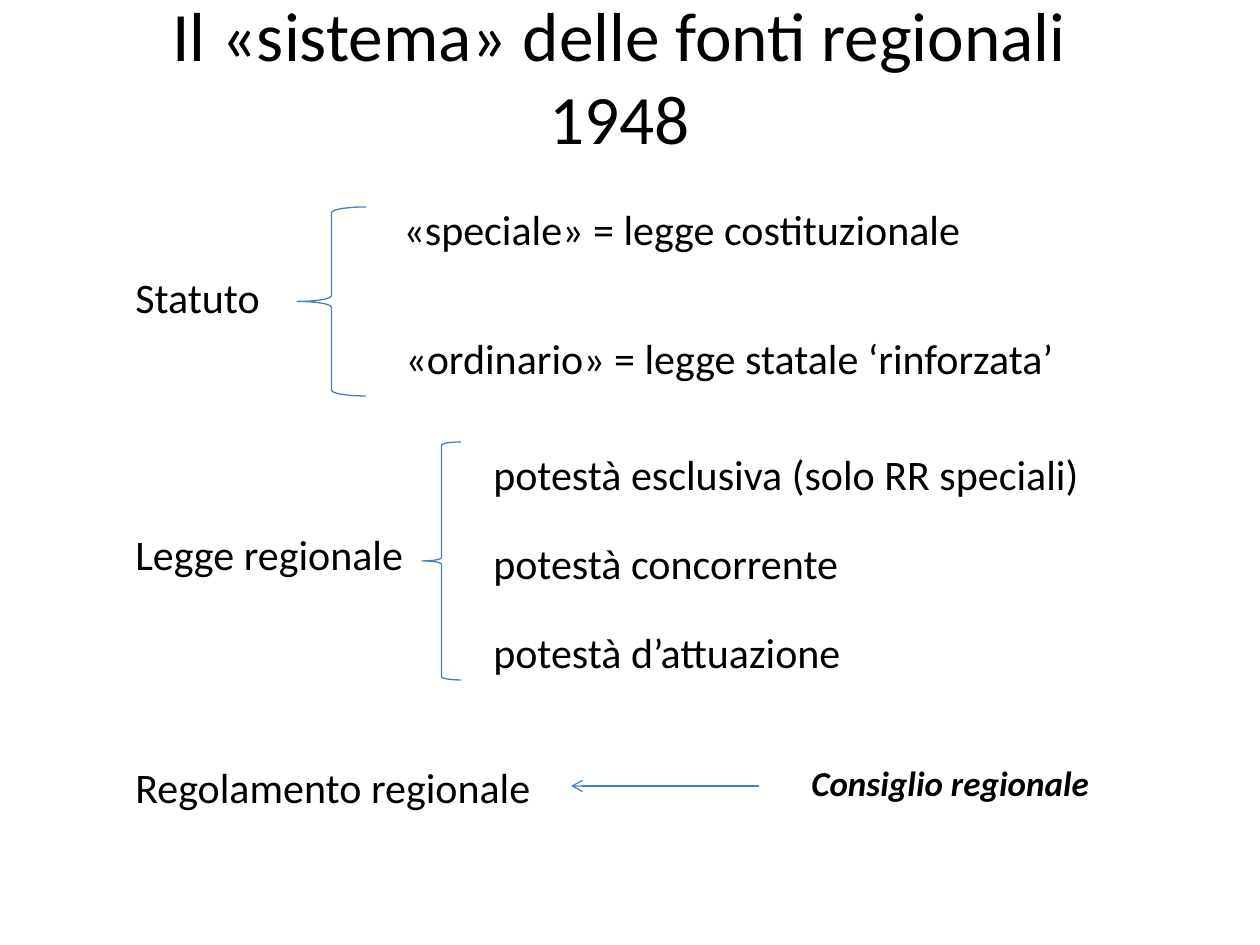
from lxml.etree import SubElement
from pptx import Presentation
from pptx.dml.color import RGBColor
from pptx.enum.shapes import MSO_CONNECTOR as Link, MSO_SHAPE as Shape
from pptx.enum.text import MSO_ANCHOR as Anchor, PP_ALIGN as Align
from pptx.oxml.ns import qn
from pptx.util import Pt

SCALE = 914400 // 126
BLUE = "4B7EBC"
BLACK = "000000"


def px(*sizes):
    return [size * SCALE for size in sizes]


def color(code):
    return RGBColor.from_string(code)


def label(slide, box, text, size=24, accent=False, align=Align.LEFT, anchor=Anchor.TOP):
    frame = slide.shapes.add_textbox(*px(*box)).text_frame
    frame.word_wrap = True
    frame.vertical_anchor = anchor
    para = frame.paragraphs[0]
    para.alignment = align
    run = para.add_run()
    run.text = text
    font = run.font
    font.name = "Calibri"
    font.size = Pt(size)
    font.bold = font.italic = accent
    font.color.rgb = color(BLACK)


def stroke(line):
    line.color.rgb = color(BLUE)
    line.width = Pt(0.75)


def title(slide, box):
    label(slide, box, "Il «sistema» delle fonti regionali 1948", 39.6,
          align=Align.CENTER, anchor=Anchor.MIDDLE)


def branch(slide, box, head, brace, items):
    left, top, width, height = box
    text, drop, span = head
    label(slide, (left, top + drop, span, 63), text)

    x, y, w, h = brace
    shape = slide.shapes.add_shape(Shape.LEFT_BRACE, *px(left + x, top + y, w, h))
    shape.shadow.inherit = False
    shape.fill.background()
    stroke(shape.line)

    for text, x, y in items:
        label(slide, (left + x, top + y, width - x, 63), text)


def source(slide, box):
    left, top, width, height = box
    label(slide, (left, top, 476, height), "Regolamento regionale")
    label(slide, (left + 676, top, width - 676, 55), "Consiglio regionale", 20, accent=True)

    level = top + height // 2
    arrow = slide.shapes.add_connector(
        Link.STRAIGHT, *px(left + 636, level, left + 448, level))
    stroke(arrow.line)
    SubElement(arrow.line._get_or_add_ln(), qn("a:tailEnd"), type="arrow")
    SubElement(arrow._element.spPr, qn("a:effectLst"))


def main():
    deck = Presentation()
    deck.slide_width, deck.slide_height = px(1260, 945)
    slide = deck.slides.add_slide(deck.slide_layouts[6])

    title(slide, (84, 16, 1071, 118))
    branch(slide, (123, 197, 944, 199), ("Statuto", 68, 169), (174, 10, 69, 189), [
        ("«speciale» = legge costituzionale", 268, 0),
        ("«ordinario» = legge statale ‘rinforzata’", 270, 129),
    ])
    powers = ["esclusiva (solo RR speciali)", "concorrente", "d’attuazione"]
    branch(slide, (123, 442, 1013, 238), ("Legge regionale", 80, 307), (299, 0, 39, 238),
           [(f"potestà {power}", 358, 89 * row) for row, power in enumerate(powers)])
    source(slide, (123, 755, 1014, 63))

    deck.save("out.pptx")


if __name__ == "__main__":
    main()
